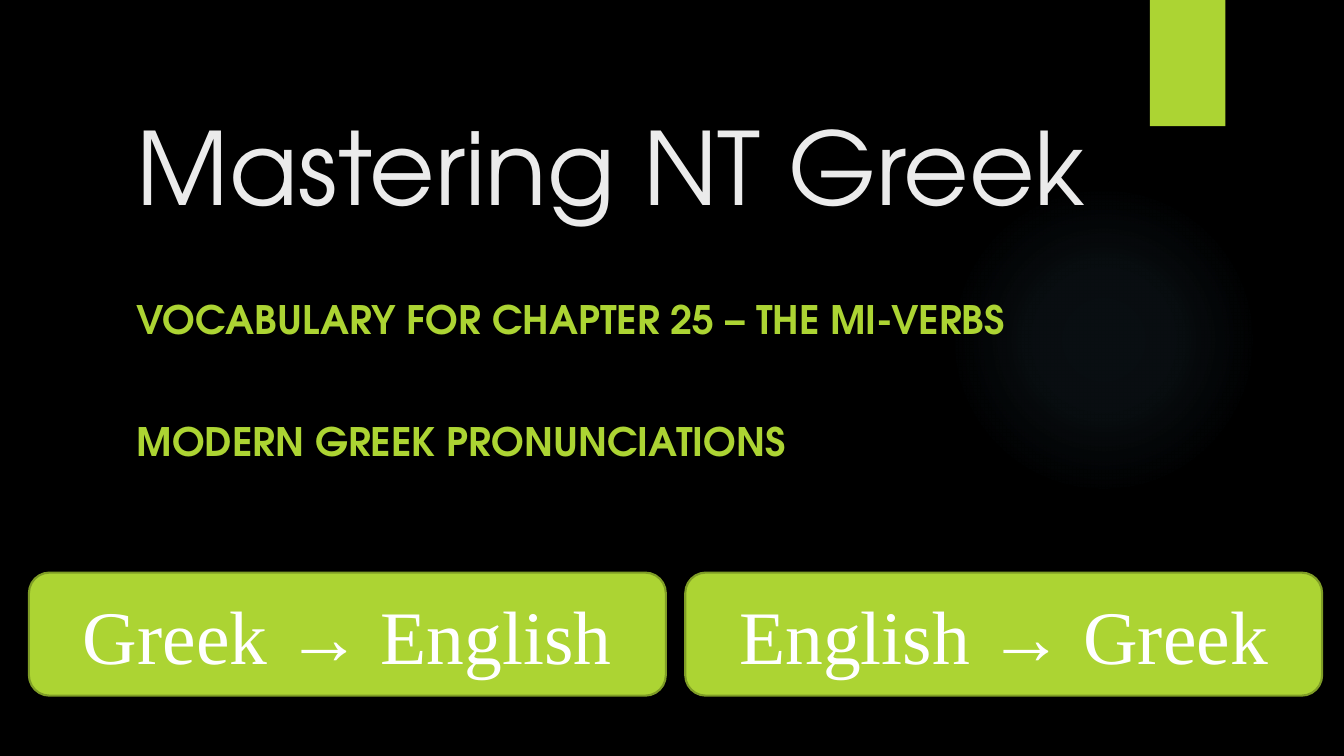
from lxml import etree
from pptx import Presentation
from pptx.dml.color import RGBColor
from pptx.enum.shapes import MSO_SHAPE
from pptx.enum.text import MSO_ANCHOR, PP_ALIGN
from pptx.oxml.ns import qn
from pptx.util import Cm, Pt

OVAL, RECTANGLE, ROUNDED = MSO_SHAPE.OVAL, MSO_SHAPE.RECTANGLE, MSO_SHAPE.ROUNDED_RECTANGLE
BOTTOM, MIDDLE, CENTER = MSO_ANCHOR.BOTTOM, MSO_ANCHOR.MIDDLE, PP_ALIGN.CENTER
HEADING_FONT, BUTTON_FONT = "TeX Gyre Adventor", "Times New Roman"
LIME, GLOW = "ACD433", "7AC4F0"


def color(value):
    return RGBColor.from_string(value)


def add_text(paragraph, text, font_name, size, hex_color, bold=False):
    run = paragraph.add_run()
    run.text = text
    run.font.name = font_name
    run.font.size = Pt(size)
    run.font.bold = bold
    run.font.color.rgb = color(hex_color)


presentation = Presentation()
presentation.slide_width, presentation.slide_height = Cm(33.87), Cm(19.05)
slide = presentation.slides.add_slide(presentation.slide_layouts[6])
slide.background.fill.solid()
slide.background.fill.fore_color.rgb = color("000000")

# Soft round glow
glow = slide.shapes.add_shape(OVAL, Cm(23.9), Cm(4.65), Cm(7.82), Cm(7.82))
glow.shadow.inherit = False
glow.line.fill.background()
gradient = etree.Element(qn("a:gradFill"), rotWithShape="1")
stops = etree.SubElement(gradient, qn("a:gsLst"))
for position, opacity in [(0, 7), (36, 6), (69, 0)]:
    stop = etree.SubElement(stops, qn("a:gs"), pos=str(position * 1000))
    stop_color = etree.SubElement(stop, qn("a:srgbClr"), val=GLOW)
    etree.SubElement(stop_color, qn("a:alpha"), val=str(opacity * 1000))
circle = etree.SubElement(gradient, qn("a:path"), path="circle")
etree.SubElement(circle, qn("a:fillToRect"), l="50000", t="50000", r="50000", b="50000")
glow.element.spPr.find(qn("a:prstGeom")).addnext(gradient)

# Corner tab
tab = slide.shapes.add_shape(RECTANGLE, Cm(28.98), 0, Cm(1.9), Cm(3.18))
tab.shadow.inherit = False
tab.fill.solid()
tab.fill.fore_color.rgb = color(LIME)
tab.line.fill.background()

# Title
title = slide.shapes.add_textbox(Cm(3.2), Cm(1.78), Cm(25.5), Cm(4.04)).text_frame
title.word_wrap = True
title.vertical_anchor = BOTTOM
add_text(title.paragraphs[0], "Mastering NT Greek", HEADING_FONT, 72, "EBEBEB")

# Subtitle
subtitle = slide.shapes.add_textbox(Cm(3.2), Cm(7.32), Cm(26.49), Cm(6.83)).text_frame
subtitle.word_wrap = True
add_text(subtitle.paragraphs[0], "VOCABULARY FOR CHAPTER 25 – THE MI-VERBS",
         HEADING_FONT, 28, LIME, bold=True)
paragraph = subtitle.add_paragraph()
paragraph.space_before = Pt(53.7)
add_text(paragraph, "MODERN GREEK PRONUNCIATIONS", HEADING_FONT, 28, LIME, bold=True)

# Direction buttons
for column, label in enumerate(["Greek → English", "English → Greek"]):
    button = slide.shapes.add_shape(
        ROUNDED, Cm(0.73 + column * 16.54), Cm(14.43), Cm(16.05), Cm(3.1))
    button.shadow.inherit = False
    button.fill.solid()
    button.fill.fore_color.rgb = color(LIME)
    button.line.color.rgb = color("7F9D26")
    button.line.width = Pt(1.5)
    button.text_frame.word_wrap = True
    button.text_frame.vertical_anchor = MIDDLE
    paragraph = button.text_frame.paragraphs[0]
    paragraph.alignment = CENTER
    add_text(paragraph, label, BUTTON_FONT, 54, "FFFFFF")

presentation.save("out.pptx")
